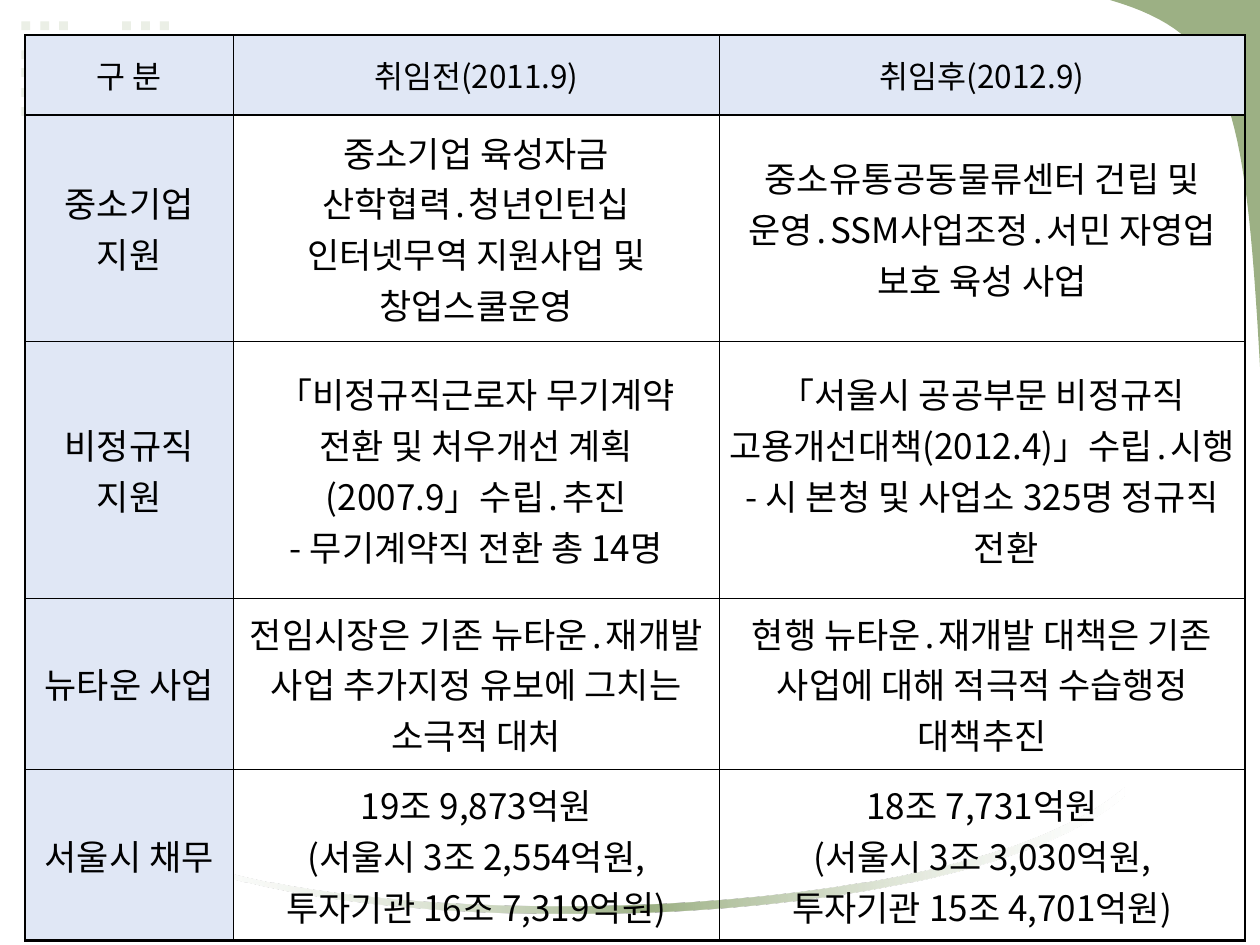
from lxml import etree
from pptx import Presentation
from pptx import util as u
from pptx.dml.color import RGBColor
from pptx.enum import shapes, text
from pptx.oxml import parse_xml
from pptx.oxml.ns import nsdecls, qn

FONT = "Noto Sans CJK KR"
INK, HEAD, DOT, GREEN, WHITE = "000000", "E0E7F5", "EBEFE6", "9CB084", "FFFFFF"
THIN, THICK = 0.28, 1.5

LEFT, TOP = 0.2, 0.28
COLS = [1.65, 3.86, 4.17]
ROWS = [0.63, 1.8, 1.8, 1.36, 1.36]
CELLS = [
    [["구 분"], ["취임전(2011.9)"], ["취임후(2012.9)"]],
    [["중소기업 지원"],
     ["중소기업 육성자금", "산학협력․청년인턴십", "인터넷무역 지원사업 및 창업스쿨운영"],
     ["중소유통공동물류센터 건립 및 운영․SSM사업조정․서민 자영업 보호 육성 사업"]],
    [["비정규직 지원"],
     ["「비정규직근로자 무기계약 전환 및 처우개선 계획(2007.9」수립․추진",
      "- 무기계약직 전환 총 14명"],
     ["「서울시 공공부문 비정규직 고용개선대책(2012.4)」수립․시행",
      "- 시 본청 및 사업소 325명 정규직 전환"]],
    [["뉴타운 사업"],
     ["전임시장은 기존 뉴타운․재개발 사업 추가지정 유보에 그치는 소극적 대처"],
     ["현행 뉴타운․재개발 대책은 기존 사업에 대해 적극적 수습행정 대책추진"]],
    [["서울시 채무"],
     ["19조 9,873억원", "(서울시 3조 2,554억원,", "투자기관 16조 7,319억원)"],
     ["18조 7,731억원", "(서울시 3조 3,030억원,", "투자기관 15조 4,701억원)"]],
]
PAD = 0.05
WIDE_PADS = {(2, 1): 0.15}
HANGS = {(2, 2, 1): 0.38}

DOT_SIZE, DOT_STEP = 0.07, 0.15
DOT_ROWS = [(0.17, 0.17, 3), (0.97, 0.17, 3), (0.17, 0.4, 5), (0.17, 0.54, 5),
            (0.17, 0.7, 2), (0.17, 0.85, 2)]

STEPS = 32
CORNER = [(8.81, 0), (9.75, 0.28), (9.88, 0.75), (10, 2.91)]
LOWER = [(8.92, 6.32), (7.6, 7.45), (2.8, 7.46), (1.42, 6.82)]
UPPER = [(1.42, 6.79), (2.8, 7.39), (7.6, 7.38), (8.92, 6.25)]


def bezier(ends):
    points = []
    for i in range(STEPS + 1):
        t = i / STEPS
        parts = ((1 - t) ** 3, 3 * t * (1 - t) ** 2, 3 * t * t * (1 - t), t ** 3)
        points.append(tuple(sum(p * v for p, v in zip(parts, axis)) for axis in zip(*ends)))
    return points


def paint(fill, hue):
    fill.solid()
    fill.fore_color.rgb = RGBColor.from_string(hue)


def plain(shape, hue):
    shape.shadow.inherit = False
    shape.line.fill.background()
    paint(shape.fill, hue)
    return shape


def outline(slide, points, hue):
    first, *rest = [(u.Inches(x), u.Inches(y)) for x, y in points]
    pen = slide.shapes.build_freeform(*first)
    pen.add_line_segments(rest, close=True)
    return plain(pen.convert_to_shape(), hue)


def fade(shape, hue):
    stops = "".join(
        f'<a:gs pos="{pos}"><a:srgbClr val="{tone}"><a:alpha val="{alpha}"/></a:srgbClr></a:gs>'
        for pos, tone, alpha in [(0, WHITE, 30000), (50000, hue, 100000),
                                 (100000, WHITE, 30000)])
    grad = parse_xml(f'<a:gradFill {nsdecls("a")} rotWithShape="1"><a:gsLst>{stops}'
                     '</a:gsLst><a:lin ang="0" scaled="1"/></a:gradFill>')
    props = shape._element.spPr
    props.replace(props.find(qn("a:solidFill")), grad)


def backdrop(slide):
    for left, top, count in DOT_ROWS:
        for i in range(count):
            box = (left + i * DOT_STEP, top, DOT_SIZE, DOT_SIZE)
            plain(slide.shapes.add_shape(shapes.MSO_SHAPE.RECTANGLE, *map(u.Inches, box)), DOT)
    outline(slide, bezier(CORNER) + [(10, 0)], GREEN)
    fade(outline(slide, bezier(LOWER) + bezier(UPPER), GREEN), GREEN)


def edge(cell, row, col):
    bold = {"L": col == 0, "R": col == len(COLS) - 1,
            "T": row < 2, "B": row in (0, len(ROWS) - 1)}
    props = cell._tc.get_or_add_tcPr()
    for side, thick in bold.items():
        width = u.Pt(THICK if thick else THIN)
        line = etree.SubElement(props, qn(f"a:ln{side}"), w=str(width))
        solid = etree.SubElement(line, qn("a:solidFill"))
        etree.SubElement(solid, qn("a:srgbClr"), val=INK)


def hang(para, depth):
    props = para._p.get_or_add_pPr()
    props.set("marL", str(u.Inches(depth)))
    props.set("indent", str(-u.Inches(depth)))


def write(cell, row, col):
    cell.vertical_anchor = text.MSO_ANCHOR.MIDDLE
    cell.margin_left = cell.margin_right = u.Inches(WIDE_PADS.get((row, col), PAD))
    cell.margin_top = cell.margin_bottom = u.Inches(0.01)
    frame = cell.text_frame
    for i, words in enumerate(CELLS[row][col]):
        para = frame.add_paragraph() if i else frame.paragraphs[0]
        para.alignment = text.PP_ALIGN.CENTER
        if (row, col, i) in HANGS:
            hang(para, HANGS[row, col, i])
        run = para.add_run()
        run.text = words
        run.font.size = u.Pt(20 if row else 18)
        run.font.name = FONT
        run.font.color.rgb = RGBColor.from_string(INK)
        etree.SubElement(run.font._element, qn("a:ea"), typeface=FONT)


def grid(slide):
    box = (LEFT, TOP, sum(COLS), sum(ROWS))
    table = slide.shapes.add_table(len(ROWS), len(COLS), *map(u.Inches, box)).table
    table.first_row = table.horz_banding = False
    for col, width in zip(table.columns, COLS):
        col.width = u.Inches(width)
    for row, height in zip(table.rows, ROWS):
        row.height = u.Inches(height)
    for row in range(len(ROWS)):
        for col in range(len(COLS)):
            cell = table.cell(row, col)
            write(cell, row, col)
            edge(cell, row, col)
            if row == 0 or col == 0:
                paint(cell.fill, HEAD)
            else:
                cell.fill.background()


def main():
    deck = Presentation()
    deck.slide_width, deck.slide_height = u.Inches(10), u.Inches(7.5)
    slide = deck.slides.add_slide(deck.slide_layouts[6])
    backdrop(slide)
    grid(slide)
    deck.save("out.pptx")


if __name__ == "__main__":
    main()
